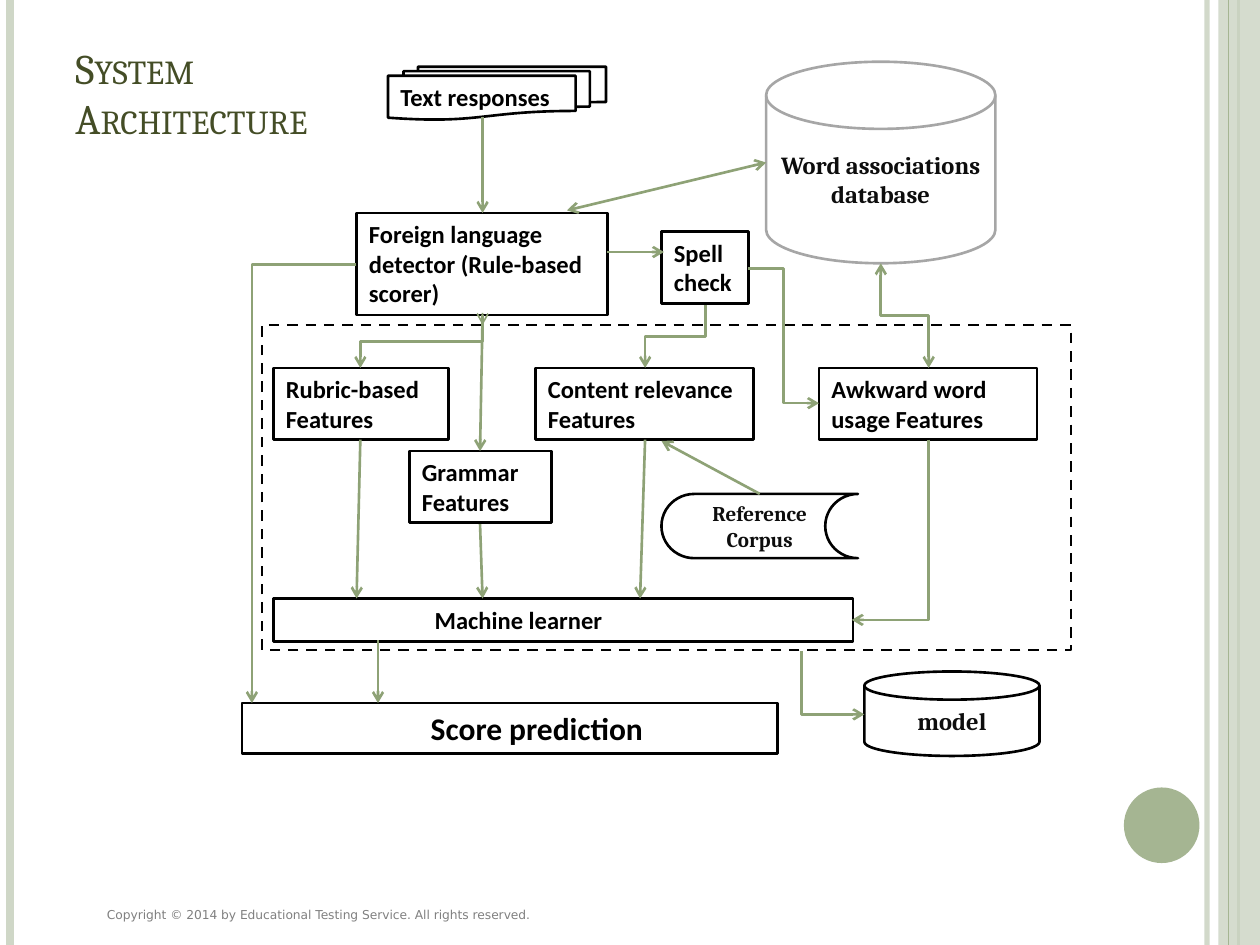
from lxml.etree import SubElement
from pptx import Presentation
from pptx.dml.color import RGBColor
from pptx.enum.dml import MSO_LINE
from pptx.enum.shapes import MSO_CONNECTOR, MSO_SHAPE
from pptx.enum.text import MSO_ANCHOR, PP_ALIGN
from pptx.oxml.ns import qn
from pptx.util import Inches, Pt

COLORS = {
    "white": "FFFFFF", "black": "000000", "ink": "0D0D0D", "title": "444D26",
    "footer": "808080", "sage": "A5B592", "pale": "CFD7C7", "arrow": "8EA276",
    "gray": "A6A6A6",
}


def color(name):
    return RGBColor.from_string(COLORS[name])


def set_alpha(fill, percent):
    """Make a solid fill partly transparent."""
    clr = fill._xPr.find(qn("a:solidFill"))[0]
    SubElement(clr, qn("a:alpha")).set("val", str(percent * 1000))


def add_text(sp, text, size, font, ink, bold=True, align=PP_ALIGN.LEFT,
             anchor=MSO_ANCHOR.TOP):
    tf = sp.text_frame
    tf.word_wrap = True
    tf.vertical_anchor = anchor
    p = tf.paragraphs[0]
    p.text = text
    p.alignment = align
    p.font.size, p.font.name, p.font.bold = Pt(size), font, bold
    p.font.color.rgb = color(ink)
    return tf


def add_outline(s, kind, box, fill=None, line=None, width=1.5):
    sp = s.shapes.add_shape(kind, *map(Inches, box))
    sp.shadow.inherit = False
    if fill:
        sp.fill.solid()
        sp.fill.fore_color.rgb = color(fill)
    else:
        sp.fill.background()
    if line:
        sp.line.color.rgb = color(line)
        sp.line.width = Pt(width)
    else:
        sp.line.fill.background()
    return sp


def add_step(s, text, box, kind=MSO_SHAPE.RECTANGLE):
    sp = add_outline(s, kind, box, "white", "black")
    return add_text(sp, text, 14, "Calibri", "black")


def add_store(s, kind, text, box, size=14, line="black"):
    sp = add_outline(s, kind, box, line=line)
    add_text(sp, text, size, "Cambria", "ink", align=PP_ALIGN.CENTER,
             anchor=MSO_ANCHOR.MIDDLE)


def add_line(s, start, end, line="arrow", width=1.5, kind=MSO_CONNECTOR.STRAIGHT):
    c = s.shapes.add_connector(kind, *map(Inches, (*start, *end)))
    c.line.color.rgb = color(line)
    c.line.width = Pt(width)
    SubElement(c._element.spPr, qn("a:effectLst"))
    return c


def add_heads(c, both=False):
    ln = c.line._get_or_add_ln()
    for tag in ("a:headEnd", "a:tailEnd") if both else ("a:tailEnd",):
        SubElement(ln, qn(tag)).set("type", "arrow")


def add_arrow(s, start, end, both=False, width=1.5):
    add_heads(add_line(s, start, end, width=width), both)


def add_elbow(s, start, end, down_first=False, one_bend=False, both=False):
    """Bent arrow; one that leaves downwards is a turned horizontal one."""
    rotation = 0
    if down_first:
        (x1, y1), (x2, y2) = start, end
        side = 1 if x2 > x1 else -1
        cx, cy = (x1 + x2) / 2, (y1 + y2) / 2
        half_w, half_h = (y2 - y1) / 2, abs(x2 - x1) / 2
        start = cx + side * half_w, cy - half_h
        end = cx - side * half_w, cy + half_h
        rotation = 270 if side > 0 else 90
    c = add_line(s, start, end, kind=MSO_CONNECTOR.ELBOW)
    c.rotation = rotation
    if one_bend:
        c._element.spPr.find(qn("a:prstGeom")).set("prst", "bentConnector2")
    add_heads(c, both)


def add_frame(s):
    """Side rules, right band and corner disc."""
    edge = add_line(s, (9.58, 0), (9.58, 7.5), "pale", 3)
    set_alpha(edge.line.fill, 93)
    add_line(s, (0.08, 0), (0.08, 7.5), "pale", 4.5)
    add_line(s, (9.83, 0), (9.83, 7.5), "sage", 1.5)
    band = add_outline(s, MSO_SHAPE.RECTANGLE, (9.67, 0, 0.33, 7.5), "pale")
    set_alpha(band.fill, 87)
    add_line(s, (9.75, 0), (9.75, 7.5), "sage", 0.75)
    add_outline(s, MSO_SHAPE.OVAL, (8.92, 6.25, 0.6, 0.6), "sage")


def add_label(s, text, box, size, font, ink, anchor=MSO_ANCHOR.TOP):
    sp = s.shapes.add_textbox(*map(Inches, box))
    return add_text(sp, text, size, font, ink, bold=False, anchor=anchor)


def add_boxes(s):
    add_step(s, "Spell check", (5.25, 1.84, 0.69, 0.57))
    add_step(s, "Foreign language detector (Rule-based scorer)",
             (2.83, 1.69, 1.99, 0.81))
    add_step(s, "Text responses", (3.08, 0.53, 1.73, 0.42),
             MSO_SHAPE.FLOWCHART_MULTIDOCUMENT)
    for text, x, y, w in (
        ("Rubric-based Features", 2.17, 2.92, 1.39),
        ("Content relevance Features", 4.25, 2.92, 1.73),
        ("Awkward word usage Features", 6.5, 2.92, 1.73),
        ("Grammar Features", 3.25, 3.58, 1.13),
    ):
        add_step(s, text, (x, y, w, 0.57))
    learner = add_step(s, "Machine learner", (2.17, 4.75, 4.6, 0.34))
    learner.margin_left = Inches(1.28)
    score = add_outline(s, MSO_SHAPE.RECTANGLE, (1.92, 5.58, 4.25, 0.4),
                        line="black")
    tf = add_text(score, "Score prediction", 18, "Calibri", "black",
                  align=PP_ALIGN.CENTER)
    tf.margin_left = Inches(0.53)

    disk = MSO_SHAPE.FLOWCHART_MAGNETIC_DISK
    add_store(s, disk, "Word associations database", (6.08, 0.49, 1.82, 1.6),
              line="gray")
    add_store(s, disk, "model", (6.86, 5.33, 1.39, 0.67))
    add_store(s, MSO_SHAPE.FLOWCHART_STORED_DATA, "Reference Corpus",
              (5.25, 3.92, 1.56, 0.51), size=12)
    scope = add_outline(s, MSO_SHAPE.RECTANGLE, (2.08, 2.58, 6.42, 2.58),
                        line="black")
    scope.line.dash_style = MSO_LINE.DASH


def add_flow(s):
    for start, end in (
        ((3.83, 0.93), (3.83, 1.69)),
        ((4.82, 2), (5.27, 2)),
        ((3.83, 2.5), (3.81, 3.58)),
        ((2.86, 3.49), (2.83, 4.75)),
        ((3.81, 4.16), (3.83, 4.75)),
        ((5.12, 3.49), (5.08, 4.75)),
        ((6.03, 3.92), (5.25, 3.5)),
        ((3, 5.08), (3, 5.58)),
    ):
        add_arrow(s, start, end)
    add_arrow(s, (3.83, 2.5), (3.83, 2.58), width=1)
    add_arrow(s, (4.5, 1.67), (6.08, 1.29), both=True)

    add_elbow(s, (5.94, 2.13), (6.5, 3.2))
    add_elbow(s, (2.83, 2.1), (2, 5.58), one_bend=True)
    add_elbow(s, (3.83, 2.5), (2.86, 2.92), down_first=True)
    add_elbow(s, (5.6, 2.42), (5.12, 2.92), down_first=True)
    add_elbow(s, (6.99, 2.09), (7.37, 2.92), down_first=True, both=True)
    add_elbow(s, (7.37, 3.49), (6.76, 4.92), down_first=True, one_bend=True)
    add_elbow(s, (6.36, 5.17), (6.86, 5.67), down_first=True, one_bend=True)


def main():
    prs = Presentation()
    prs.slide_width, prs.slide_height = Inches(10), Inches(7.5)
    s = prs.slides.add_slide(prs.slide_layouts[6])
    add_frame(s)
    add_label(s, "Copyright © 2014 by Educational Testing Service. "
              "All rights reserved.", (0.75, 7.15, 6.25, 0.22), 7,
              "DejaVu Sans", "footer")
    add_boxes(s)
    add_flow(s)
    title = add_label(s, "System Architecture", (0.5, 0.3, 2.58, 0.87), 24,
                      "Cambria", "title", MSO_ANCHOR.MIDDLE)
    title.paragraphs[0].runs[0].font._element.set("cap", "small")
    prs.save("out.pptx")


if __name__ == "__main__":
    main()
